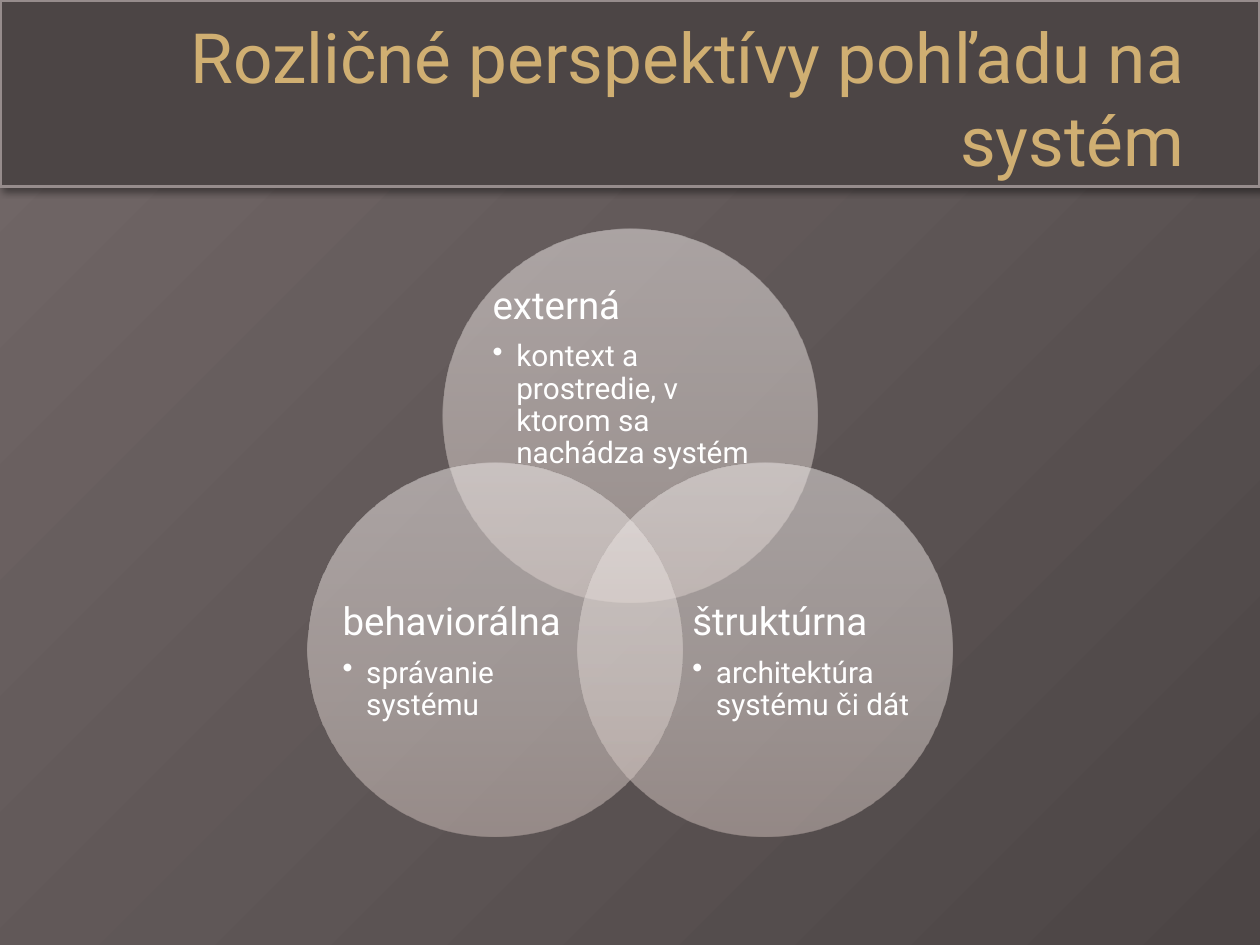
from copy import deepcopy
from dataclasses import dataclass

from lxml.etree import SubElement
from pptx import Presentation
from pptx.dml.color import RGBColor
from pptx.enum.shapes import MSO_SHAPE
from pptx.enum.text import MSO_ANCHOR, PP_ALIGN
from pptx.oxml.ns import qn
from pptx.util import Pt


@dataclass(frozen=True)
class Theme:
    font: str = "Roboto"
    title_size: float = 39.6
    heading_size: float = 22
    bullet_size: float = 17
    gold: str = "D0AF72"
    white: str = "FFFFFF"
    black: str = "000000"
    header: str = "4C4545"
    header_line: str = "968C8C"
    background: tuple = ((0, "726868"), (1, "4C4545"))
    circle: tuple = ((0, "D1C1BC"), (0.35, "DED4D0"), (1, "F3EEED"))
    circle_opacity: int = 50


class SlideBuilder:
    def __init__(self, page, theme):
        self.page = page
        self.theme = theme

    def background(self):
        fill = self.page.background.fill
        fill.gradient()
        fill.gradient_angle = 315
        for stop, (position, color) in zip(fill.gradient_stops, self.theme.background):
            stop.position = position
            stop.color.rgb = RGBColor.from_string(color)

    def header(self, width, height):
        bar = self.page.shapes.add_shape(MSO_SHAPE.RECTANGLE, 0, 0, Pt(width), Pt(height))
        bar.shadow.inherit = False
        bar.fill.solid()
        bar.fill.fore_color.rgb = RGBColor.from_string(self.theme.header)
        bar.line.color.rgb = RGBColor.from_string(self.theme.header_line)
        bar.line.width = Pt(2)
        effects = bar._element.spPr.find(qn("a:effectLst"))
        shadow = SubElement(effects, qn("a:outerShdw"), blurRad=str(Pt(4)),
                            dist=str(Pt(3)), dir=str(45 * 60000), rotWithShape="0")
        color = SubElement(shadow, qn("a:srgbClr"), val=self.theme.black)
        SubElement(color, qn("a:alpha"), val="40000")

    def circle(self, center_x, center_y, radius):
        disc = self.page.shapes.add_shape(
            MSO_SHAPE.OVAL, Pt(center_x - radius), Pt(center_y - radius),
            Pt(2 * radius), Pt(2 * radius))
        disc.shadow.inherit = False
        disc.line.fill.background()
        disc.fill.gradient()
        disc.fill.gradient_angle = 90
        stop_list = disc._element.spPr.find(qn("a:gradFill")).find(qn("a:gsLst"))
        stop_list.append(deepcopy(stop_list[-1]))
        for stop, (position, color) in zip(disc.fill.gradient_stops, self.theme.circle):
            stop.position = position
            stop.color.rgb = RGBColor.from_string(color)
        for color in stop_list.iter(qn("a:srgbClr")):
            SubElement(color, qn("a:alpha"), val=str(self.theme.circle_opacity * 1000))

    def text_frame(self, left, top, width, height):
        box = self.page.shapes.add_textbox(Pt(left), Pt(top), Pt(width), Pt(height))
        frame = box.text_frame
        frame.word_wrap = True
        frame.vertical_anchor = MSO_ANCHOR.MIDDLE
        return frame

    def style(self, para, size, color):
        for span in para.runs:
            span.font.name = self.theme.font
            span.font.size = Pt(size)
            span.font.color.rgb = RGBColor.from_string(color)

    def title(self, text, left, top, width, height):
        frame = self.text_frame(left, top, width, height)
        frame.text = text
        para = frame.paragraphs[0]
        para.alignment = PP_ALIGN.RIGHT
        self.style(para, self.theme.title_size, self.theme.gold)

    def label(self, heading, detail, left, top, width, height):
        frame = self.text_frame(left, top, width, height)
        frame.margin_left = frame.margin_right = 0
        frame.margin_top = frame.margin_bottom = 0
        frame.text = f"{heading}\n{detail}"
        sizes = (self.theme.heading_size, self.theme.bullet_size)
        for para, size, gap in zip(frame.paragraphs, sizes, (0.35, 0.15)):
            para.line_spacing = 0.9
            para.space_after = Pt(size * gap)
            self.style(para, size, self.theme.white)
        bullet = frame.paragraphs[1]
        bullet.level = 1
        properties = bullet._p.get_or_add_pPr()
        properties.set("marL", str(Pt(13.5)))
        properties.set("indent", str(-Pt(13.5)))
        SubElement(properties, qn("a:buChar"), char="•")


def main():
    deck = Presentation()
    deck.slide_width, deck.slide_height = Pt(720), Pt(540)
    page = deck.slides.add_slide(deck.slide_layouts[6])
    builder = SlideBuilder(page, Theme())
    builder.background()
    builder.header(720, 106.5)
    builder.title("Rozličné perspektívy pohľadu na systém", 36, 21.6, 648, 68.4)

    middle, top_row, bottom_row = 360, 237.5, 371.3
    radius, offset = 107, 77.2
    lower_label = (319.7, 128.2, 117.4)
    perspectives = [
        (middle, top_row, "externá", "kontext a prostredie, v ktorom sa nachádza systém",
         (281.5, 167.8, 157, 96.5)),
        (middle + offset, bottom_row, "štruktúrna", "architektúra systému či dát",
         (395.6, *lower_label)),
        (middle - offset, bottom_row, "behaviorálna", "správanie systému",
         (195.8, *lower_label)),
    ]
    for center_x, center_y, heading, detail, area in perspectives:
        builder.circle(center_x, center_y, radius)
        builder.label(heading, detail, *area)
    deck.save("out.pptx")


if __name__ == "__main__":
    main()
